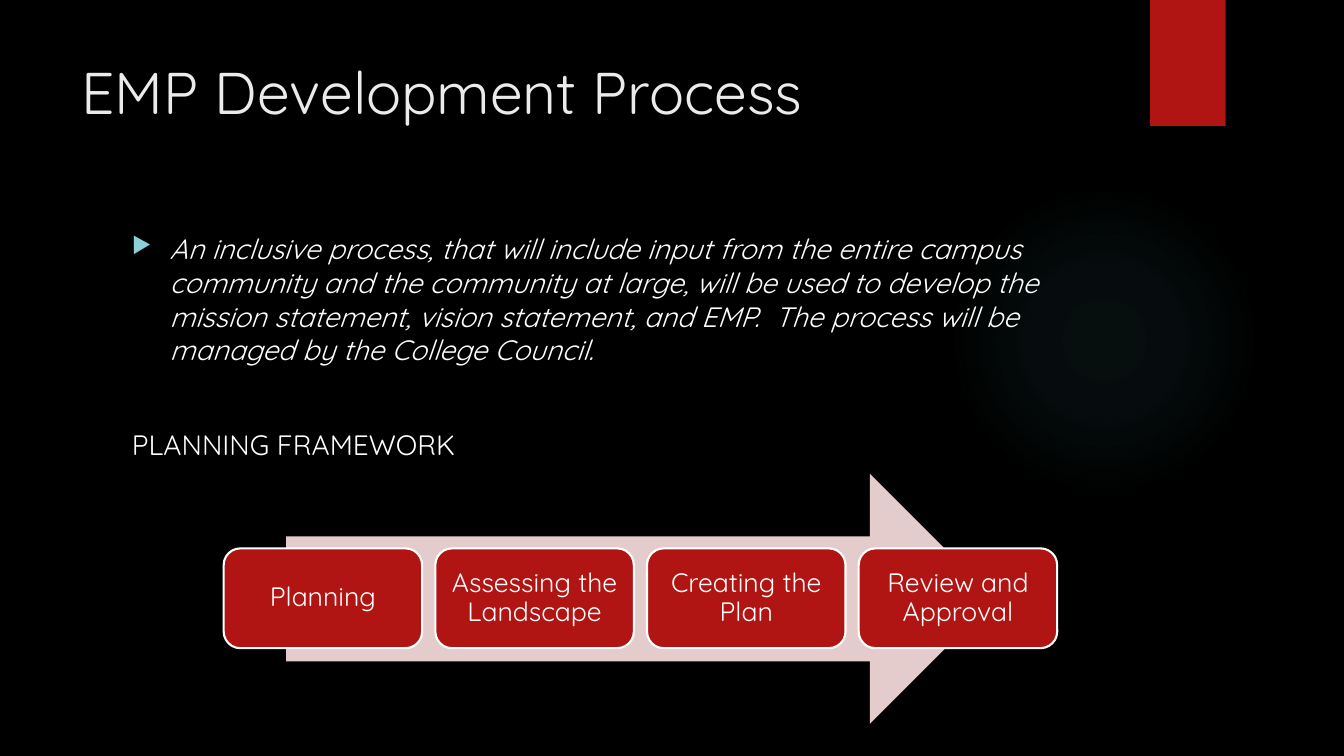
"""Build the EMP Development Process slide."""
from dataclasses import dataclass

from lxml.etree import SubElement
from pptx import Presentation
from pptx.dml.color import RGBColor
from pptx.enum.shapes import MSO_SHAPE
from pptx.enum.text import MSO_ANCHOR, PP_ALIGN
from pptx.oxml import parse_xml
from pptx.oxml.ns import nsdecls, qn
from pptx.util import Pt


@dataclass(frozen=True)
class Theme:
    """Colours, font and type sizes of the slide."""
    font: str = "Quicksand"
    background: str = "000000"
    heading: str = "EBEBEB"
    text: str = "FFFFFF"
    accent: str = "B01513"
    pale: str = "E4CCCC"
    bullet: str = "8AD0D6"
    glow: str = "50B9C1"
    title_size: int = 42
    body_size: int = 20
    step_size: int = 19


def apply_format(target, formats):
    """Set each named attribute on the target."""
    for name, value in formats.items():
        setattr(target, name, value)


class SlideBuilder:
    """Draws styled elements on the current slide."""

    def __init__(self, slide, theme):
        """Keep the slide and theme and paint the background."""
        self.slide = slide
        self.theme = theme
        slide.background.fill.solid()
        slide.background.fill.fore_color.rgb = RGBColor.from_string(theme.background)

    def shape(self, kind, box, color, outline=None):
        """Add a filled preset shape with an optional outline."""
        shape = self.slide.shapes.add_shape(kind, *map(Pt, box))
        shape.shadow.inherit = False
        shape.fill.solid()
        shape.fill.fore_color.rgb = RGBColor.from_string(color)
        if outline:
            shape.line.color.rgb = RGBColor.from_string(outline)
            shape.line.width = Pt(1.5)
        else:
            shape.line.fill.background()
        return shape

    def glow(self, box, stops):
        """Add a circle that fades out from its centre."""
        halo = self.shape(MSO_SHAPE.OVAL, box, self.theme.glow)
        colors = "".join(
            f'<a:gs pos="{position * 1000}"><a:srgbClr val="{self.theme.glow}">'
            f'<a:alpha val="{alpha * 1000}"/></a:srgbClr></a:gs>'
            for position, alpha in stops
        )
        gradient = parse_xml(
            f'<a:gradFill {nsdecls("a")}><a:gsLst>{colors}</a:gsLst><a:path path="circle">'
            '<a:fillToRect l="50000" t="50000" r="50000" b="50000"/></a:path></a:gradFill>'
        )
        properties = halo._element.spPr
        properties.replace(properties.find(qn("a:solidFill")), gradient)

    def text_box(self, box):
        """Add a wrapping text box and return its frame."""
        frame = self.slide.shapes.add_textbox(*map(Pt, box)).text_frame
        frame.word_wrap = True
        return frame

    def set_text(self, paragraph, text, size, color, italic=False, **formats):
        """Fill a paragraph with styled text."""
        paragraph.text = text
        apply_format(paragraph, formats)
        apply_format(paragraph.font, {
            "name": self.theme.font, "size": Pt(size), "italic": italic,
        })
        paragraph.font.color.rgb = RGBColor.from_string(color)

    def bullet(self, paragraph, indent):
        """Give a paragraph a hanging triangle bullet."""
        properties = paragraph._p.get_or_add_pPr()
        properties.set("marL", str(Pt(indent)))
        properties.set("indent", str(-Pt(indent)))
        color = SubElement(properties, qn("a:buClr"))
        SubElement(color, qn("a:srgbClr"), val=self.theme.bullet)
        SubElement(properties, qn("a:buSzPct"), val="80000")
        SubElement(properties, qn("a:buChar"), char="▶")

    def step(self, box, label):
        """Add a rounded box with a centred label."""
        card = self.shape(MSO_SHAPE.ROUNDED_RECTANGLE, box, self.theme.accent, self.theme.text)
        inset = Pt(5.7)
        apply_format(card.text_frame, {
            "word_wrap": True, "vertical_anchor": MSO_ANCHOR.MIDDLE,
            "margin_left": inset, "margin_right": inset,
            "margin_top": inset, "margin_bottom": inset,
        })
        self.set_text(card.text_frame.paragraphs[0], label, self.theme.step_size,
                      self.theme.text, alignment=PP_ALIGN.CENTER, line_spacing=0.9)


def main():
    """Compose and save the slide."""
    deck = Presentation()
    deck.slide_width, deck.slide_height = Pt(960), Pt(540)
    theme = Theme()
    builder = SlideBuilder(deck.slides.add_slide(deck.slide_layouts[6]), theme)

    builder.glow((677.5, 131.8, 221.8, 221.8), ((0, 7), (36, 6), (69, 0)))
    builder.shape(MSO_SHAPE.RECTANGLE, (821.5, 0, 54, 90), theme.accent)

    title = builder.text_box((51.1, 36, 741, 110))
    builder.set_text(title.paragraphs[0], "EMP Development Process",
                     theme.title_size, theme.heading)

    body = builder.text_box((87.1, 162, 704.2, 330.5))
    process = body.paragraphs[0]
    builder.bullet(process, 27)
    builder.set_text(
        process,
        "An inclusive process, that will include input from the entire campus community "
        "and the community at large, will be used to develop the mission statement, "
        "vision statement, and EMP.  The process will be managed by the College Council.",
        theme.body_size, theme.text, italic=True,
    )
    builder.set_text(body.add_paragraph(), "PLANNING FRAMEWORK", theme.body_size,
                     theme.text, space_before=Pt(44))

    builder.shape(MSO_SHAPE.RIGHT_ARROW, (204.5, 338.4, 506.2, 178.6), theme.pale)
    steps = ("Planning", "Assessing the Landscape", "Creating the Plan", "Review and Approval")
    first_left, pitch = 159.8, 151.2
    for index, label in enumerate(steps):
        builder.step((first_left + index * pitch, 391.7, 141.8, 71.3), label)

    deck.save("out.pptx")


if __name__ == "__main__":
    main()
